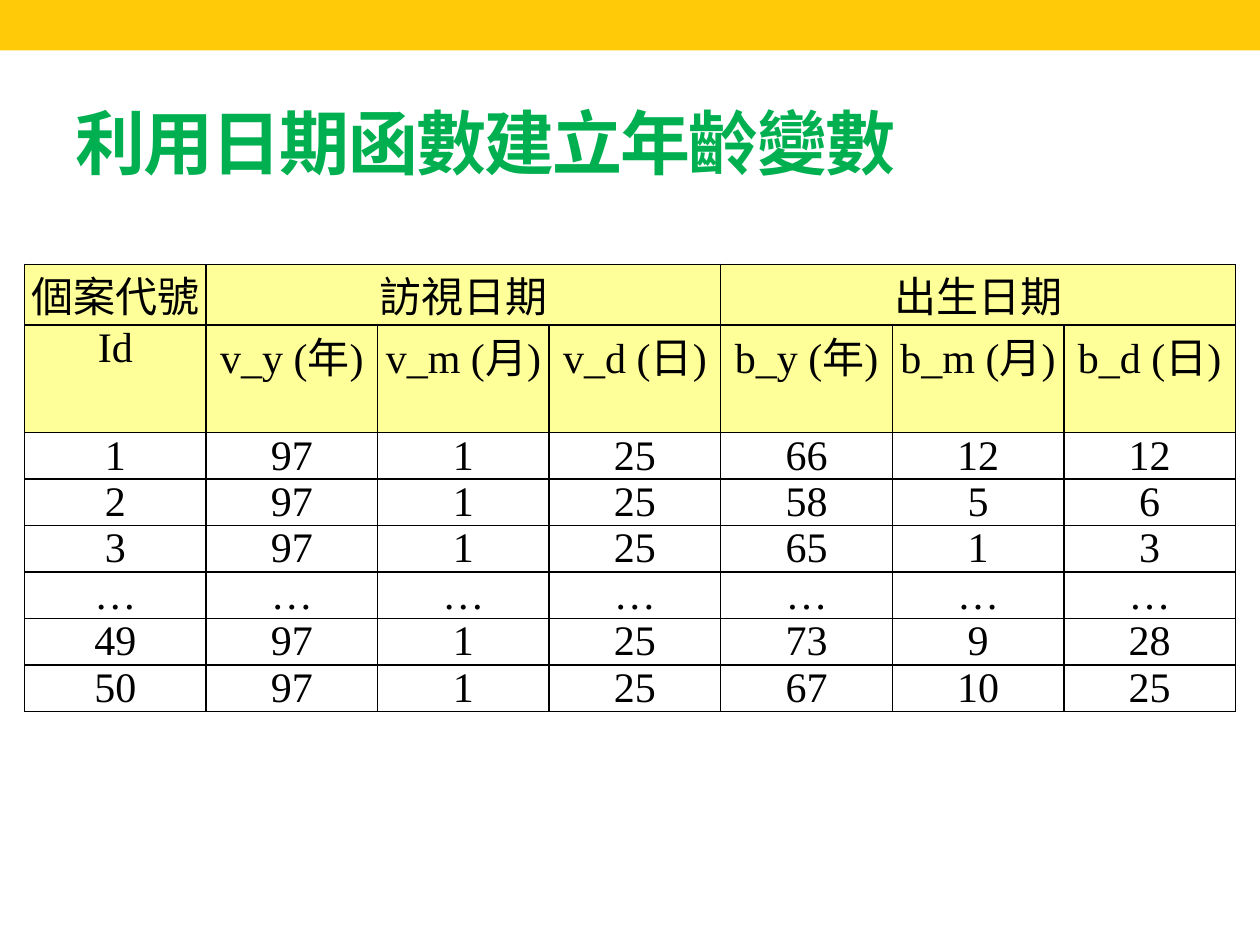
from lxml import etree
from pptx import Presentation
from pptx import util as u
from pptx.dml.color import RGBColor
from pptx.enum import shapes, text
from pptx.oxml import ns

COLORS = {"band": "FFCA08", "title": "00B050", "header": "FFFF99", "ink": "000000"}


def set_font(run, size, name, color, bold=False):
    formats = {"size": u.Pt(size), "name": name, "bold": bold}
    for attribute, value in formats.items():
        setattr(run.font, attribute, value)
    run.font.color.rgb = RGBColor.from_string(COLORS[color])


def add_borders(cell):
    properties = cell._tc.get_or_add_tcPr()
    for side in ("a:lnL", "a:lnR", "a:lnT", "a:lnB"):
        line = etree.SubElement(properties, ns.qn(side), w=str(u.Pt(1)))
        solid = etree.SubElement(line, ns.qn("a:solidFill"))
        etree.SubElement(solid, ns.qn("a:srgbClr"), val=COLORS["ink"])


presentation = Presentation()
presentation.slide_width = u.Pt(720)
presentation.slide_height = u.Pt(540)
slide = presentation.slides.add_slide(presentation.slide_layouts[6])

band = slide.shapes.add_shape(
    shapes.MSO_SHAPE.RECTANGLE, 0, 0, presentation.slide_width, u.Pt(28.8)
)
band.shadow.inherit = False
band.fill.solid()
band.fill.fore_color.rgb = RGBColor.from_string(COLORS["band"])
band.line.fill.background()

rows = [
    ["個案代號", "訪視日期", "", "", "出生日期", "", ""],
    ["Id", "v_y (年)", "v_m (月)", "v_d (日)", "b_y (年)", "b_m (月)", "b_d (日)"],
    ["1", "97", "1", "25", "66", "12", "12"],
    ["2", "97", "1", "25", "58", "5", "6"],
    ["3", "97", "1", "25", "65", "1", "3"],
    ["…"] * 7,
    ["49", "97", "1", "25", "73", "9", "28"],
    ["50", "97", "1", "25", "67", "10", "25"],
]
header_rows = 2
widths = [103.7] + [98.05] * 6
row_height = 16.6

table = slide.shapes.add_table(
    len(rows), len(widths), u.Pt(14.1), u.Pt(151),
    u.Pt(sum(widths)), u.Pt(row_height * len(rows)),
).table
table.first_row = False
table.horz_banding = False
for column, width in zip(table.columns, widths):
    column.width = u.Pt(width)

cell_format = {
    "margin_left": u.Pt(1.5),
    "margin_right": u.Pt(1.5),
    "margin_top": 0,
    "margin_bottom": 0,
    "vertical_anchor": text.MSO_ANCHOR.TOP,
}
for row_index, values in enumerate(rows):
    table.rows[row_index].height = u.Pt(row_height)
    for column_index, value in enumerate(values):
        cell = table.cell(row_index, column_index)
        for attribute, setting in cell_format.items():
            setattr(cell, attribute, setting)
        add_borders(cell)
        if row_index < header_rows:
            cell.fill.solid()
            cell.fill.fore_color.rgb = RGBColor.from_string(COLORS["header"])
        else:
            cell.fill.background()
        if value:
            paragraph = cell.text_frame.paragraphs[0]
            paragraph.alignment = text.PP_ALIGN.CENTER
            run = paragraph.add_run()
            run.text = value
            set_font(run, 24, "Times New Roman", "ink")

for first_column in (1, 4):
    table.cell(0, first_column).merge(table.cell(0, first_column + 2))

title = slide.shapes.add_textbox(u.Pt(36), u.Pt(41.8), u.Pt(648), u.Pt(77.8))
title.text_frame.word_wrap = True
title.text_frame.vertical_anchor = text.MSO_ANCHOR.MIDDLE
run = title.text_frame.paragraphs[0].add_run()
run.text = "利用日期函數建立年齡變數"
set_font(run, 40, "Arial", "title", bold=True)
run.font._element.set("spc", "-100")

presentation.save("out.pptx")
